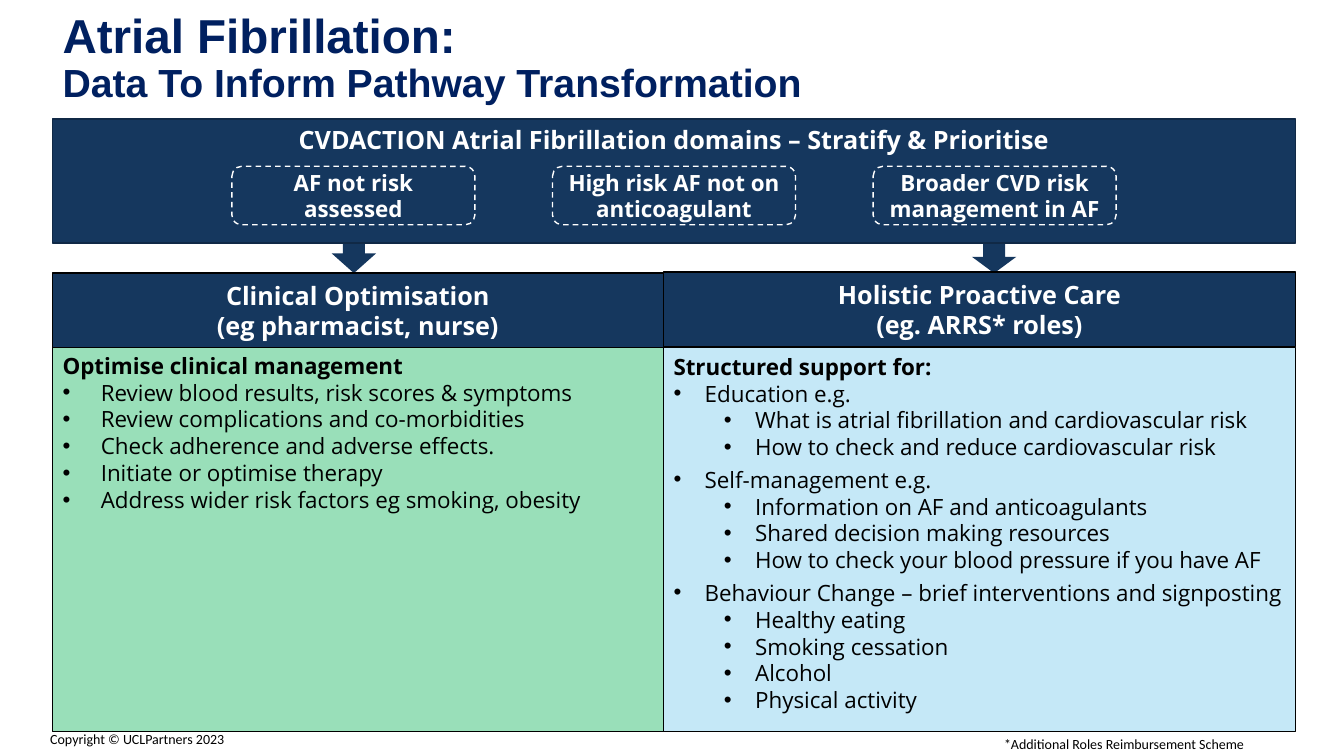
from pptx import Presentation, util as u
from pptx.dml.color import RGBColor
from pptx.enum import dml, shapes, text
from pptx.oxml.ns import qn
from lxml import etree

NAVY = "15375E"
LEFT, MID, RIGHT = 0.52, 6.58, 12.85


def tint(fmt, code):
    fmt.rgb = RGBColor.from_string(code)


def mark(para, indent, hang):
    props = para._p.get_or_add_pPr()
    props.set("marL", str(u.Inches(indent)))
    props.set("indent", str(-u.Inches(hang)))
    if hang:
        etree.SubElement(props, qn("a:buFont")).set("typeface", "Arial")
        etree.SubElement(props, qn("a:buChar")).set("char", "•")
    else:
        etree.SubElement(props, qn("a:buNone"))


def write(para, words, size=16, font="Open Sans", color="000000", bold=False,
          align=text.PP_ALIGN.LEFT, before=0, ratio=1.0):
    para.alignment = align
    para.space_before = u.Pt(before)
    para.line_spacing = ratio
    run = para.add_run()
    run.text = words
    run.font.size = u.Pt(size)
    run.font.name = font
    run.font.bold = bold
    tint(run.font.color, color)


class Deck:
    def __init__(self):
        self.prs = Presentation()
        self.prs.slide_width = u.Inches(13.33)
        self.prs.slide_height = u.Inches(7.5)
        self.slide = self.prs.slides.add_slide(self.prs.slide_layouts[3])

    def place(self, item, box):
        item.left, item.top, item.width, item.height = map(u.Inches, box)

    def paint(self, item, fill=None, line=None, alpha=None, dash=False):
        if fill:
            item.fill.solid()
            tint(item.fill.fore_color, fill)
        else:
            item.fill.background()
        if alpha:
            color = item.fill._xPr.find(qn("a:solidFill"))[0]
            etree.SubElement(color, qn("a:alpha")).set("val", str(alpha * 1000))
        if line:
            tint(item.line.color, line)
            item.line.width = u.Pt(1)
            if dash:
                item.line.dash_style = dml.MSO_LINE.DASH
        else:
            item.line.fill.background()

    def title(self, box, lines):
        item = self.slide.shapes.title
        self.place(item, box)
        frame = item.text_frame
        frame.auto_size = text.MSO_AUTO_SIZE.NONE
        frame.vertical_anchor = text.MSO_ANCHOR.TOP
        for i, (words, size) in enumerate(lines):
            para = frame.add_paragraph() if i else frame.paragraphs[0]
            write(para, words, size, "Arial", "002060", True, ratio=0.9)

    def panel(self, idx, box, fill, alpha, head, rows, hang):
        item = self.slide.placeholders[idx]
        self.place(item, box)
        self.paint(item, fill, "000000", alpha)
        frame = item.text_frame
        frame.auto_size = text.MSO_AUTO_SIZE.NONE
        first = frame.paragraphs[0]
        mark(first, 0, 0)
        write(first, head, bold=True)
        for level, words, before in rows:
            para = frame.add_paragraph()
            para.level = level
            mark(para, hang + level * 0.5, hang)
            write(para, words, before=before)

    def block(self, kind, box, lines=(), size=18, top=False, **look):
        item = self.slide.shapes.add_shape(kind, *map(u.Inches, box))
        item.shadow.inherit = False
        self.paint(item, **look)
        frame = item.text_frame
        frame.word_wrap = True
        frame.vertical_anchor = text.MSO_ANCHOR.TOP if top else text.MSO_ANCHOR.MIDDLE
        for i, words in enumerate(lines):
            para = frame.add_paragraph() if i else frame.paragraphs[0]
            write(para, words, size, color="FFFFFF", bold=True,
                  align=text.PP_ALIGN.CENTER)
        return item

    def note(self, box, words, wrap):
        item = self.slide.shapes.add_textbox(*map(u.Inches, box))
        item.text_frame.word_wrap = wrap
        write(item.text_frame.paragraphs[0], words, 10, "Calibri")


def main():
    deck = Deck()
    kinds = shapes.MSO_SHAPE
    deck.title((LEFT, 0.07, 11.15, 1.29), [
        ("Atrial Fibrillation:", 34),
        ("Data To Inform Pathway Transformation", 28)])

    clinic = ["Review blood results, risk scores & symptoms",
              "Review complications and co-morbidities",
              "Check adherence and adverse effects.",
              "Initiate or optimise therapy",
              "Address wider risk factors eg smoking, obesity"]
    deck.panel(1, (LEFT, 3.44, MID - LEFT, 3.82), "00B050", 40,
               "Optimise clinical management",
               [(0, words, 0) for words in clinic], 0.38)

    support = {
        "Education e.g.": [
            "What is atrial fibrillation and cardiovascular risk",
            "How to check and reduce cardiovascular risk"],
        "Self-management e.g.": [
            "Information on AF and anticoagulants",
            "Shared decision making resources",
            "How to check your blood pressure if you have AF"],
        "Behaviour Change – brief interventions and signposting": [
            "Healthy eating", "Smoking cessation", "Alcohol",
            "Physical activity"]}
    rows = []
    for topic, parts in support.items():
        rows.append((0, topic, 4 if rows else 0))
        rows += [(1, part, 0) for part in parts]
    deck.panel(2, (MID, 3.45, RIGHT - MID, 3.81), "42B6E6", 30,
               "Structured support for:", rows, 0.31)

    for left, top, high in ((3.29, 2.36, 0.35), (9.64, 2.42, 0.29)):
        arrow = deck.block(kinds.DOWN_ARROW, (left, top, 0.44, high), fill=NAVY)
        arrow.adjustments[1] = 0.56

    deck.block(kinds.RECTANGLE, (LEFT, 2.71, MID - LEFT, 0.74),
               ["Clinical Optimisation", "(eg pharmacist, nurse)"],
               fill=NAVY, line="000000")
    deck.block(kinds.RECTANGLE, (MID, 2.7, RIGHT - MID, 0.74),
               ["Holistic Proactive Care", "(eg. ARRS* roles)"],
               fill=NAVY, line="000000")
    deck.block(kinds.RECTANGLE, (LEFT, 1.18, RIGHT - LEFT, 1.23),
               ["CVDACTION Atrial Fibrillation domains – Stratify & Prioritise"],
               top=True, fill=NAVY, line="102946")

    risks = ["AF not risk assessed", "High risk AF not on anticoagulant",
             "Broader CVD risk management in AF"]
    for i, risk in enumerate(risks):
        deck.block(kinds.ROUNDED_RECTANGLE, (2.3 + i * 3.18, 1.65, 2.41, 0.58),
                   [risk], 16, line="FFFFFF", dash=True)

    deck.note((0.4, 7.2, 1.96, 0.27), "Copyright © UCLPartners 2023", False)
    deck.note((9.86, 7.25, 3, 0.27), "*Additional Roles Reimbursement Scheme", True)
    deck.prs.save("out.pptx")


if __name__ == "__main__":
    main()
